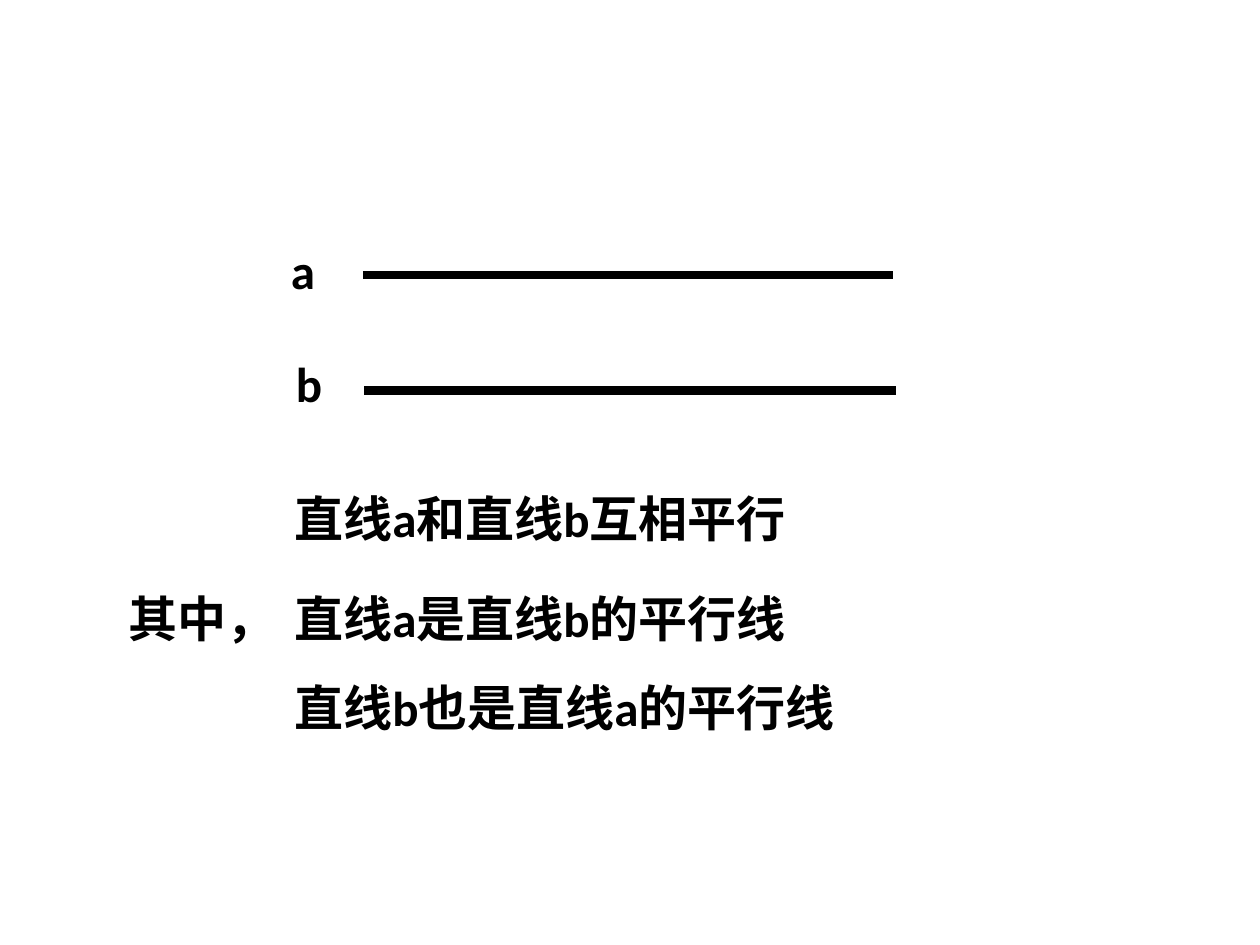
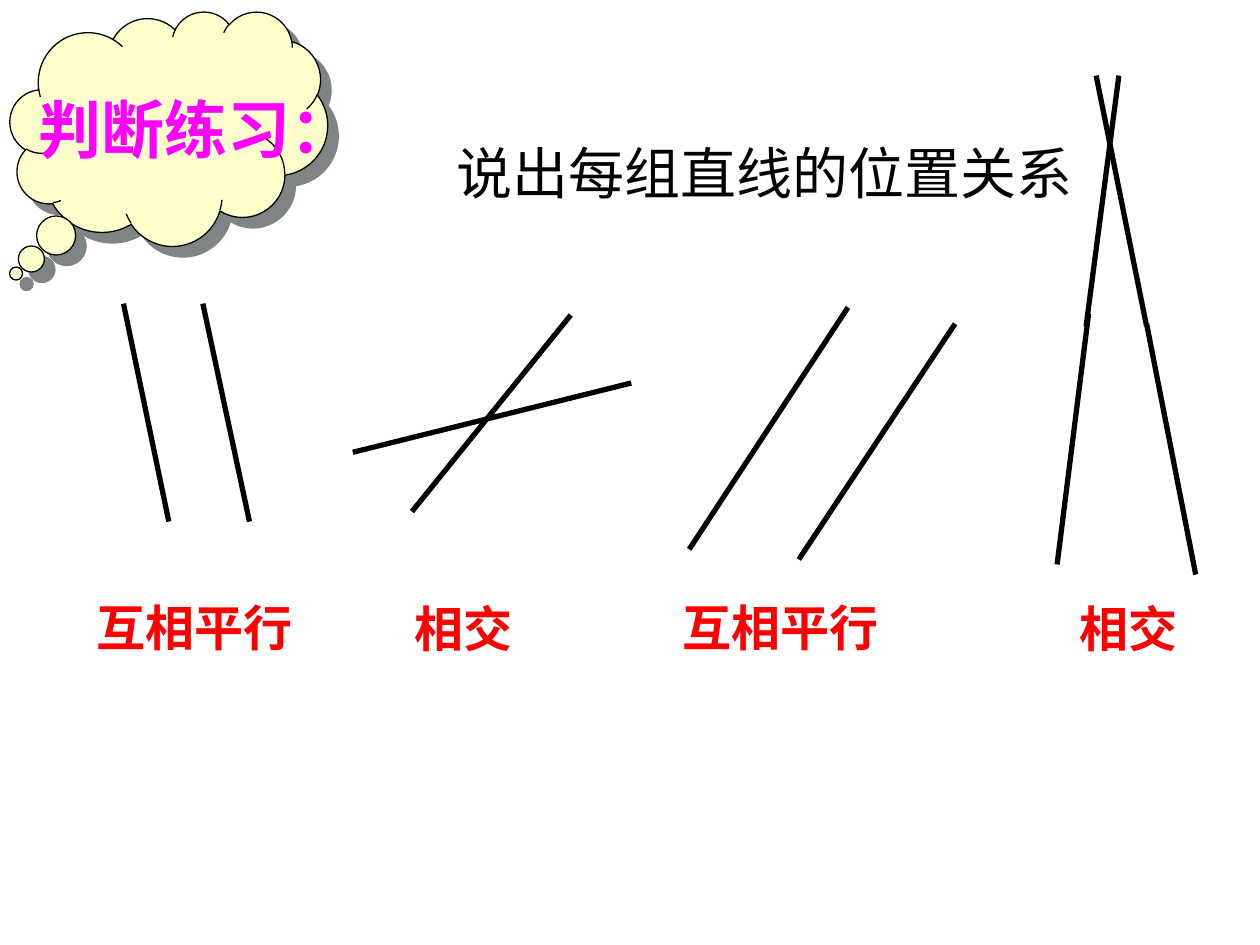
from lxml import etree
from pptx import Presentation
from pptx.dml.color import RGBColor
from pptx.enum.shapes import MSO_CONNECTOR, MSO_SHAPE
from pptx.enum.text import MSO_ANCHOR, PP_ALIGN
from pptx.oxml import parse_xml
from pptx.oxml.ns import nsdecls, qn
from pptx.util import Inches, Pt

STRAIGHT = MSO_CONNECTOR.STRAIGHT
CLOUD = MSO_SHAPE.CLOUD_CALLOUT
CENTER, LEFT = PP_ALIGN.CENTER, PP_ALIGN.LEFT
MIDDLE, TOP = MSO_ANCHOR.MIDDLE, MSO_ANCHOR.TOP

BLACK, RED, MAGENTA, CREAM = "000000", "FF0000", "FF00FF", "FFFFCC"
BODY_FONT, HEADING_FONT = "Calibri", "Arial"
TEXT_HEIGHT = 0.57
TAB_STOP = 1.32

# Slide 1: statements and line names (text, left, top, width)
STATEMENTS = [
    ("直线a和直线b互相平行", 2.24, 3.83, 5.97),
    ("其中，\t直线a是直线b的平行线", 0.92, 4.62, 6.44),
    ("直线b也是直线a的平行线", 2.24, 5.33, 4.96),
    ("a", 2.21, 1.86, 0.63),
    ("b", 2.25, 2.76, 0.47),
]
# Lines: start x, start y, end x, end y
PARALLEL_LINES = [((2.88, 2.18, 7.09, 2.18), 4.75), ((2.89, 3.1, 7.11, 3.1), 5)]

# Slide 2: each exercise has an answer, its place and its lines
HEADING = "判断练习："
QUESTION = "说出每组直线的位置关系"
EXERCISES = [
    ("互相平行", 0.67, 4.69, [(0.98, 2.41, 1.34, 4.14), (1.61, 2.41, 1.98, 4.14)]),
    ("相交", 3.19, 4.7, [(4.53, 2.5, 3.27, 4.06), (2.8, 3.59, 5.01, 3.04)]),
    ("互相平行", 5.32, 4.69, [(6.73, 2.44, 5.47, 4.36), (7.58, 2.57, 6.34, 4.44)]),
    ("相交", 8.47, 4.7, [(8.64, 2.49, 8.39, 4.48), (9.1, 2.57, 9.49, 4.56),
                       (8.88, 0.6, 8.62, 2.59), (8.7, 0.6, 9.1, 2.59)]),
]
ANSWER_WIDTH = 1.5


def color(hex_text):
    return RGBColor.from_string(hex_text)


def add_text(page, text, left, top, width, height=TEXT_HEIGHT, size=28, bold=True,
             ink=BLACK, font=BODY_FONT, align=LEFT, anchor=TOP, wrap=True):
    box = page.shapes.add_textbox(Inches(left), Inches(top), Inches(width), Inches(height))
    frame = box.text_frame
    frame.text = text
    frame.word_wrap = wrap
    frame.vertical_anchor = anchor
    para = frame.paragraphs[0]
    para.alignment = align
    for span in para.runs:
        span.font.name = font
        span.font.size = Pt(size)
        span.font.bold = bold
        span.font.color.rgb = color(ink)
    if "\t" in text:
        tabs = etree.SubElement(para._p.get_or_add_pPr(), qn("a:tabLst"))
        etree.SubElement(tabs, qn("a:tab"), pos=str(Inches(TAB_STOP)), algn="l")


def add_line(page, ends, weight=3):
    line = page.shapes.add_connector(STRAIGHT, *[Inches(value) for value in ends])
    line.line.color.rgb = color(BLACK)
    line.line.width = Pt(weight)
    etree.SubElement(line._element.spPr, qn("a:effectLst"))


def add_cloud(page):
    cloud = page.shapes.add_shape(CLOUD, Inches(0.08), Inches(0.09), Inches(2.52), Inches(1.86))
    cloud.adjustments[0], cloud.adjustments[1] = -0.481, 0.619
    cloud.fill.solid()
    cloud.fill.fore_color.rgb = color(CREAM)
    cloud.line.color.rgb = color(BLACK)
    cloud.line.width = Pt(0.75)
    # Hard half-transparent shadow towards the lower right
    cloud.shadow.inherit = False
    cloud._element.spPr.find(qn("a:effectLst")).append(parse_xml(
        f'<a:outerShdw {nsdecls("a")} dist="{Pt(8.5)}" dir="2700000" algn="ctr" rotWithShape="0">'
        '<a:srgbClr val="000C0C"><a:alpha val="50000"/></a:srgbClr></a:outerShdw>'))


def build_parallel_slide(page):
    for text, left, top, width in STATEMENTS:
        add_text(page, text, left, top, width)
    for ends, weight in PARALLEL_LINES:
        add_line(page, ends, weight)


def build_exercise_slide(page):
    add_text(page, QUESTION, 2.14, 0.74, 7.86, 1.25, size=32, bold=False,
             align=CENTER, anchor=MIDDLE)
    add_cloud(page)
    add_text(page, HEADING, 0.21, 0.67, 2.74, 0.71, size=36, ink=MAGENTA,
             font=HEADING_FONT, wrap=False)
    for answer, left, top, lines in EXERCISES:
        for ends in lines:
            add_line(page, ends)
        add_text(page, answer, left, top, ANSWER_WIDTH + 0.3 * (len(answer) > 2), ink=RED)


def main():
    deck = Presentation()
    deck.slide_width, deck.slide_height = Inches(10), Inches(7.5)
    blank = deck.slide_layouts[6]
    for build in (build_parallel_slide, build_exercise_slide):
        build(deck.slides.add_slide(blank))
    deck.save("out.pptx")


if __name__ == "__main__":
    main()
